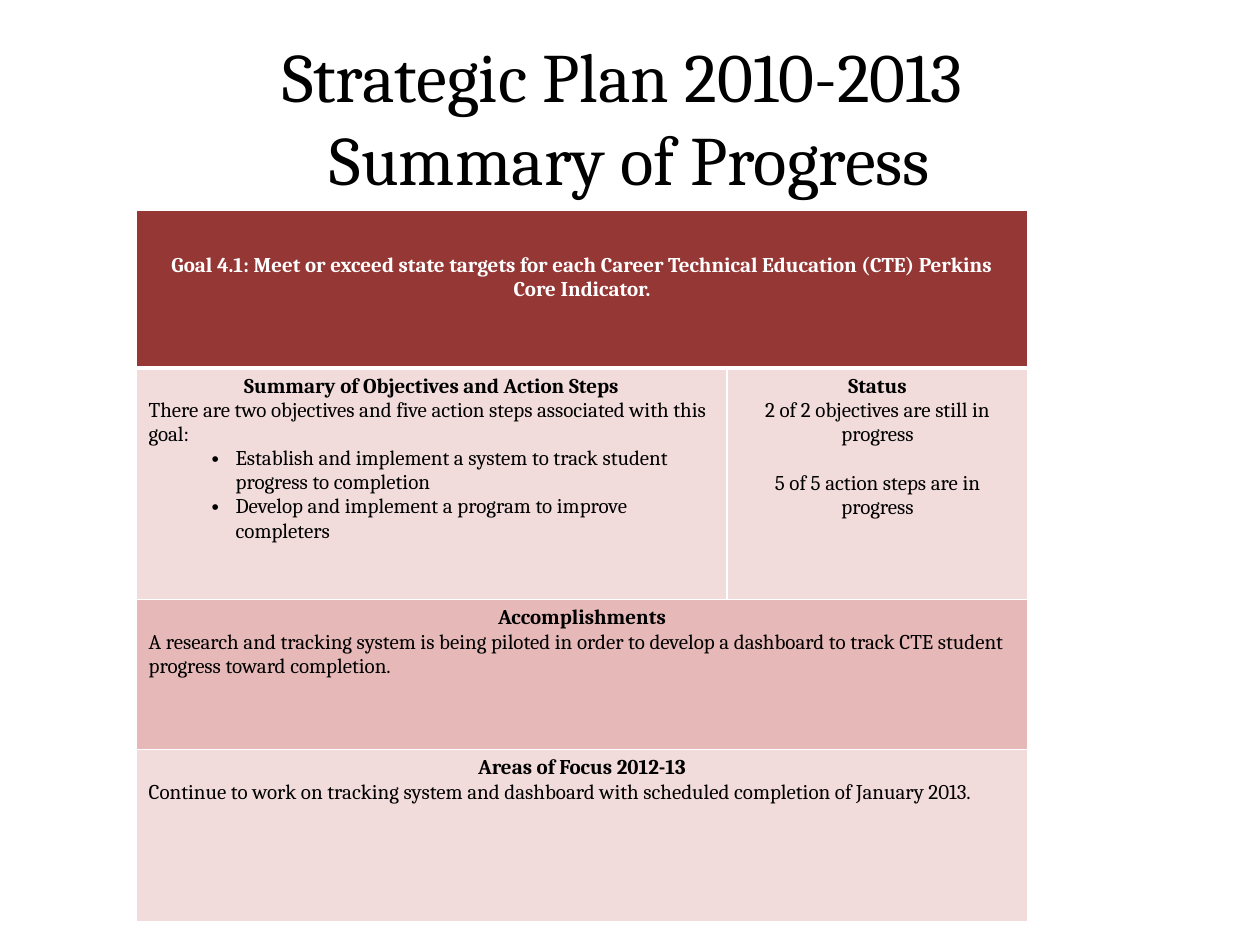
from lxml.etree import SubElement
from pptx import Presentation
from pptx.dml.color import RGBColor
from pptx.enum.text import MSO_ANCHOR, PP_ALIGN
from pptx.oxml import parse_xml
from pptx.oxml.ns import nsdecls, qn
from pptx.util import Inches, Pt


def write(frame, text, size=12, color="000000", bold=False, align=PP_ALIGN.LEFT,
          bullet=False, gap=0):
    """Fill the frame's first paragraph, or add one if it already has text."""
    paragraph = frame.paragraphs[0] if not frame.text else frame.add_paragraph()
    paragraph.text = text
    paragraph.alignment = align
    if gap:
        paragraph.space_before = Pt(gap)
    if bullet:
        paragraph.level = 1
        properties = paragraph._p.get_or_add_pPr()
        properties.set("marL", str(Inches(0.69)))
        properties.set("indent", str(Inches(-0.19)))
        SubElement(properties, qn("a:buFont")).set("typeface", "Arial")
        SubElement(properties, qn("a:buChar")).set("char", "•")
    for run in paragraph.runs:
        run.font.name = "Cambria"
        run.font.size = Pt(size)
        run.font.bold = bold
        run.font.color.rgb = RGBColor.from_string(color)


def style_cell(cell, fill, top, bottom):
    """Set the fill and white borders; top and bottom are widths in points."""
    cell.fill.solid()
    cell.fill.fore_color.rgb = RGBColor.from_string(fill)
    borders = {"lnL": 1, "lnR": 1, "lnT": top, "lnB": bottom}
    for position, (side, width) in enumerate(borders.items()):
        cell._tc.tcPr.insert(position, parse_xml(
            f'<a:{side} {nsdecls("a")} w="{Pt(width)}"><a:solidFill>'
            f'<a:srgbClr val="FFFFFF"/></a:solidFill></a:{side}>'))


presentation = Presentation()
presentation.slide_width = Inches(10)
presentation.slide_height = Inches(7.5)
slide = presentation.slides.add_slide(presentation.slide_layouts[6])

title = slide.shapes.add_textbox(
    Inches(0.5), Inches(0.3), Inches(9), Inches(1.25)).text_frame
title.word_wrap = True
title.vertical_anchor = MSO_ANCHOR.MIDDLE
write(title, "Strategic Plan 2010-2013 \vSummary of Progress", size=39.6,
      align=PP_ALIGN.CENTER)

column_widths = [4.69, 2.39]
row_heights = [1.25, 1.84, 1.19, 1.37]
row_fills = ["953735", "F2DCDB", "E6B9B8", "F2DCDB"]
progress = slide.shapes.add_table(
    len(row_heights), len(column_widths), Inches(1.08), Inches(1.67),
    Inches(sum(column_widths)), Inches(sum(row_heights))).table
for column, width in zip(progress.columns, column_widths):
    column.width = Inches(width)
for index, (row, height, fill) in enumerate(
        zip(progress.rows, row_heights, row_fills)):
    row.height = Inches(height)
    for cell in row.cells:
        style_cell(cell, fill, top=3 if index == 1 else 1,
                   bottom=3 if index == 0 else 1)
for index in (0, 2, 3):
    progress.cell(index, 0).merge(progress.cell(index, 1))

goal = progress.cell(0, 0)
goal.margin_top = Inches(0.34)
write(goal.text_frame,
      "Goal 4.1: Meet or exceed state targets for each Career Technical "
      "Education (CTE) Perkins Core Indicator.",
      color="FFFFFF", bold=True, align=PP_ALIGN.CENTER)

centered = {"align": PP_ALIGN.CENTER}
sections = [
    (1, 0, "Summary of Objectives and Action Steps", [
        ("There are two objectives and five action steps associated with "
         "this goal:", {}),
        ("Establish and implement a system to track student progress to "
         "completion", {"bullet": True}),
        ("Develop and implement a program to improve completers",
         {"bullet": True}),
    ]),
    (1, 1, "Status", [
        ("2 of 2 objectives are still in progress", centered),
        ("5 of 5 action steps are in progress", {**centered, "gap": 14}),
    ]),
    (2, 0, "Accomplishments", [
        ("A research and tracking system is being piloted in order to develop "
         "a dashboard to track CTE student progress toward completion.", {}),
    ]),
    (3, 0, "Areas of Focus 2012-13", [
        ("Continue to work on tracking system and dashboard with scheduled "
         "completion of January 2013.", {}),
    ]),
]
for row_index, column_index, heading, lines in sections:
    section = progress.cell(row_index, column_index).text_frame
    write(section, heading, bold=True, **centered)
    for line, line_format in lines:
        write(section, line, **line_format)

presentation.save("out.pptx")
